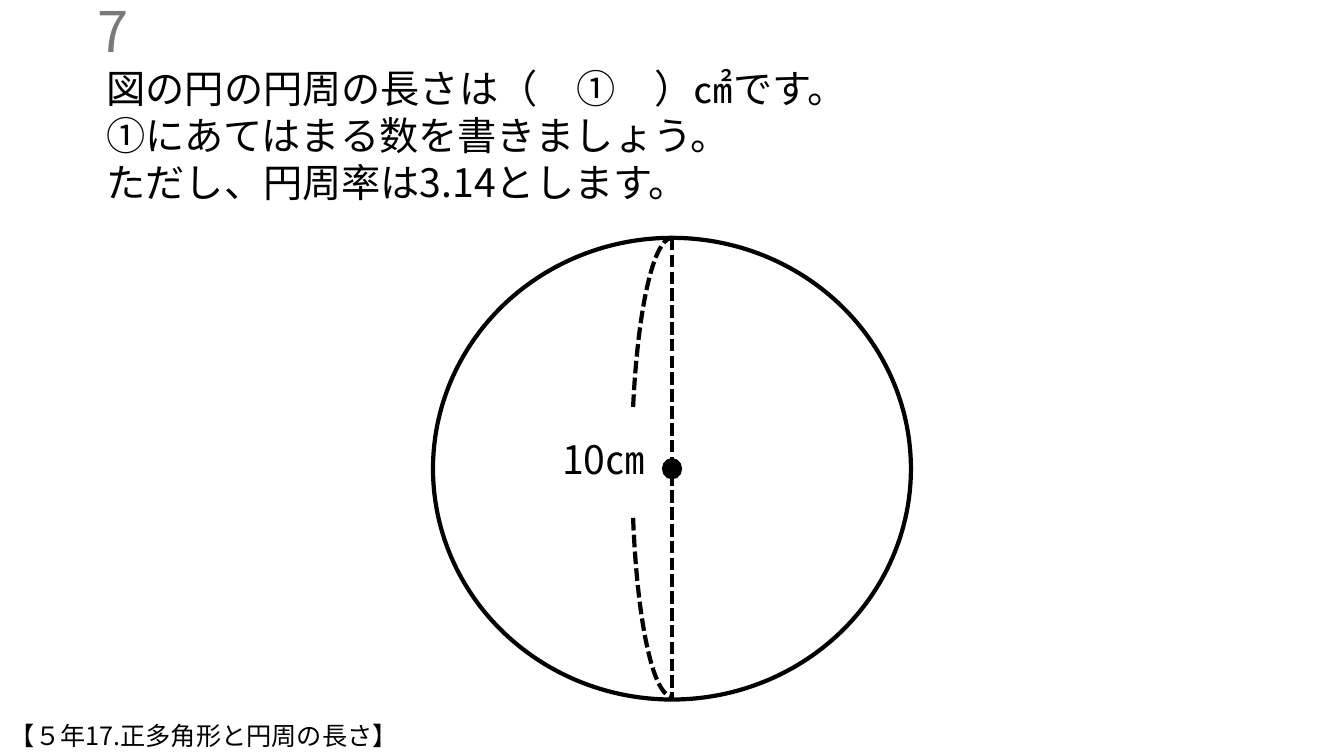
from dataclasses import dataclass

from pptx import Presentation
from pptx import util as u
from pptx.dml.color import RGBColor
from pptx.enum import dml, shapes, text
from pptx.oxml import parse_xml
from pptx.oxml.ns import nsdecls, qn

W, H = 13.33, 7.5
FONT = "Noto Sans CJK JP"
BLACK, GREY = "000000", "797979"
CENTRE_X, CENTRE_Y = W / 2, 0.62 * H
DASH = dml.MSO_LINE.SQUARE_DOT
Box = tuple[float, float, float, float]


@dataclass
class Label:
    lines: list[str]
    box: Box
    size: int = 28
    colour: str = BLACK
    align: text.PP_ALIGN = text.PP_ALIGN.LEFT
    anchor: text.MSO_ANCHOR = text.MSO_ANCHOR.TOP


@dataclass
class Arc:
    length: float
    depth: float
    start: float
    flipped: bool


def rgb(colour: str) -> RGBColor:
    return RGBColor.from_string(colour)


def inches(values: Box) -> list[int]:
    return [u.Inches(v) for v in values]


def around(x: float, y: float, w: float, h: float) -> Box:
    """Box of the given size centred on a point."""
    return x - w / 2, y - h / 2, w, h


def style_line(line, width: float, dash=None) -> None:
    line.color.rgb = rgb(BLACK)
    for name, value in {"width": u.Pt(width), "dash_style": dash}.items():
        setattr(line, name, value)


def add_label(slide, label: Label) -> None:
    tf = slide.shapes.add_textbox(*inches(label.box)).text_frame
    tf.word_wrap = True
    tf.vertical_anchor = label.anchor
    for i, line in enumerate(label.lines):
        p = tf.paragraphs[0] if i == 0 else tf.add_paragraph()
        p.alignment = label.align
        r = p.add_run()
        r.text = line
        for name, value in {"size": u.Pt(label.size), "name": FONT}.items():
            setattr(r.font, name, value)
        r.font.color.rgb = rgb(label.colour)
        ea = parse_xml(f'<a:ea {nsdecls("a")} typeface="{FONT}"/>')
        r.font._element.find(qn("a:latin")).addnext(ea)


def add_outline(parent, kind, box: Box, width: float = 3, dash=None, fill: str = ""):
    sp = parent.shapes.add_shape(kind, *inches(box))
    sp.shadow.inherit = False
    if fill:
        sp.fill.solid()
        sp.fill.fore_color.rgb = rgb(fill)
    else:
        sp.fill.background()
    style_line(sp.line, width, dash)
    return sp


def add_arc(group, arc: Arc) -> None:
    box = around(CENTRE_X, CENTRE_Y, arc.length, arc.depth)
    sp = add_outline(group, shapes.MSO_SHAPE.ARC, box, dash=DASH)
    sp.adjustments[0] = arc.start
    sp.adjustments[1] = 0
    sp.rotation = 270
    if arc.flipped:
        sp._element.spPr.find(qn("a:xfrm")).set("flipH", "1")


def main() -> None:
    prs = Presentation()
    prs.slide_width, prs.slide_height = u.Inches(W), u.Inches(H)
    slide = prs.slides.add_slide(prs.slide_layouts[6])

    # Question and its number
    question = [
        "図の円の円周の長さは（　①　）㎠です。",
        "①にあてはまる数を書きましょう。",
        "ただし、円周率は3.14とします。",
    ]
    add_label(slide, Label(question, (0.96, 0.59, 11.53, 1.51)))
    add_label(slide, Label(["7"], (-1.63, 0.1, 3, 0.4), 40, GREY,
                           text.PP_ALIGN.RIGHT, text.MSO_ANCHOR.MIDDLE))

    # Circle and its diameter
    oval = shapes.MSO_SHAPE.OVAL
    circle = around(CENTRE_X, CENTRE_Y, 4.74, 4.58)
    add_outline(slide, oval, circle)
    top, bottom = circle[1], circle[1] + circle[3]
    diameter = slide.shapes.add_connector(
        shapes.MSO_CONNECTOR.STRAIGHT, *inches((CENTRE_X, top, CENTRE_X, bottom)))
    style_line(diameter.line, 3, DASH)
    diameter._element.spPr.append(parse_xml(f'<a:effectLst {nsdecls("a")}/>'))

    # Dashed arcs that measure the diameter
    group = slide.shapes.add_group_shape()
    for arc in (Arc(4.58, 0.8, 196.71, False), Arc(4.52, 0.79, 193, True)):
        add_arc(group, arc)

    # Length, centre point and unit name
    add_label(slide, Label(["10㎝"], (5.25, 4.27, 1.47, 0.57), align=text.PP_ALIGN.CENTER))
    add_outline(slide, oval, around(CENTRE_X, CENTRE_Y, 0.18, 0.19), 1.5, fill=BLACK)
    add_label(slide, Label(["【５年17.正多角形と円周の長さ】"], (0, 7.1, 7.49, 0.4), 18))

    prs.save("out.pptx")


if __name__ == "__main__":
    main()
